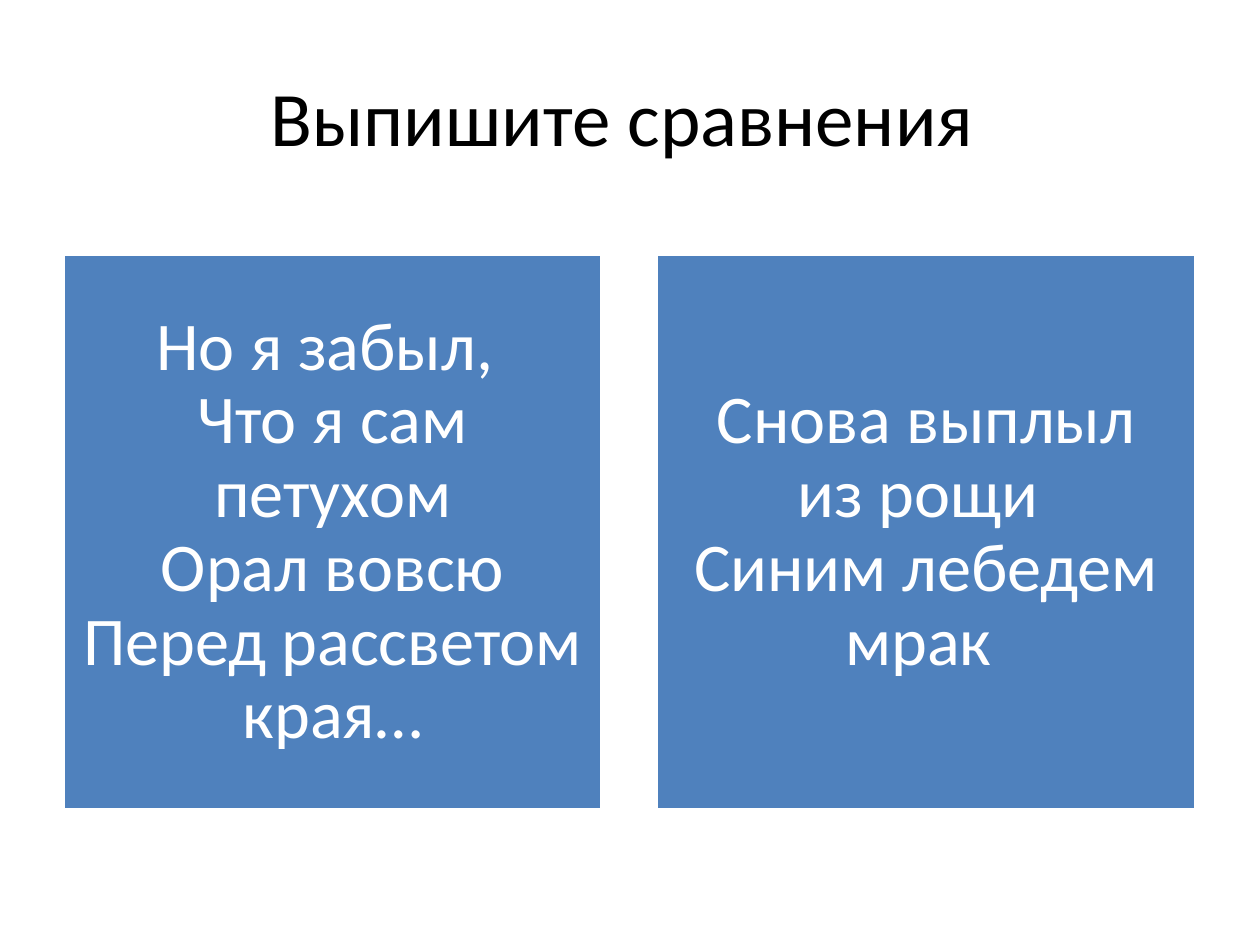
from dataclasses import dataclass

from pptx import Presentation
from pptx.dml.color import RGBColor
from pptx.enum.shapes import MSO_SHAPE
from pptx.enum.text import MSO_ANCHOR, PP_ALIGN
from pptx.util import Inches, Pt

RECTANGLE = MSO_SHAPE.RECTANGLE
MIDDLE = MSO_ANCHOR.MIDDLE
CENTER = PP_ALIGN.CENTER
TITLE_ONLY = 5


@dataclass(frozen=True)
class Theme:
    """Colours, font and type sizes of the slide."""
    font: str = "Calibri"
    ink: RGBColor = RGBColor(0x00, 0x00, 0x00)
    paper: RGBColor = RGBColor(0xFF, 0xFF, 0xFF)
    accent: RGBColor = RGBColor(0x4F, 0x81, 0xBD)
    title_size: Pt = Pt(44)
    verse_size: Pt = Pt(39)
    outline: Pt = Pt(2)


THEME = Theme()
TITLE = "Выпишите сравнения "
VERSES = (
    "Но я забыл, \nЧто я сам петухом\nОрал вовсю\nПеред рассветом края…",
    "Снова выплыл из рощи \nСиним лебедем мрак ",
)


def set_attributes(target, values):
    """Set each named value on the target."""
    for name, value in values.items():
        setattr(target, name, value)


def write_text(shape, text, size, color, spacing, frame_format):
    """Fill a shape with one centred paragraph."""
    frame = shape.text_frame
    set_attributes(frame, {"word_wrap": True, "vertical_anchor": MIDDLE, **frame_format})
    para = frame.paragraphs[0]
    para.text = text
    set_attributes(para, {"alignment": CENTER, "line_spacing": spacing})
    for span in para.runs:
        set_attributes(span.font, {"name": THEME.font, "size": size})
        span.font.color.rgb = color


def place_title(page, box):
    """Move the title placeholder into the box and write it."""
    title = page.shapes.title
    set_attributes(title, dict(zip(("left", "top", "width", "height"), box)))
    write_text(title, TITLE, THEME.title_size, THEME.ink, 1.0, {})


def place_verses(page, box, gap):
    """Divide the box into equal panels, one for each verse."""
    left, top, width, height = box
    panel_width = (width - gap * (len(VERSES) - 1)) // len(VERSES)
    inset = Inches(0.16)
    margins = {f"margin_{side}": inset for side in ("left", "top", "right", "bottom")}
    for index, verse in enumerate(VERSES):
        panel = page.shapes.add_shape(
            RECTANGLE, left + index * (panel_width + gap), top, panel_width, height
        )
        panel.shadow.inherit = False
        panel.fill.solid()
        panel.fill.fore_color.rgb = THEME.accent
        panel.line.color.rgb = THEME.paper
        panel.line.width = THEME.outline
        write_text(panel, verse, THEME.verse_size, THEME.paper, 0.9, margins)


def main():
    """Build and save the slide."""
    deck = Presentation()
    set_attributes(deck, {"slide_width": Inches(10), "slide_height": Inches(7.5)})
    page = deck.slides.add_slide(deck.slide_layouts[TITLE_ONLY])
    place_title(page, (Inches(0.51), Inches(0.29), Inches(9), Inches(1.25)))
    place_verses(page, (Inches(0.5), Inches(2.02), Inches(8.99), Inches(4.41)), Inches(0.43))
    deck.save("out.pptx")


if __name__ == "__main__":
    main()
